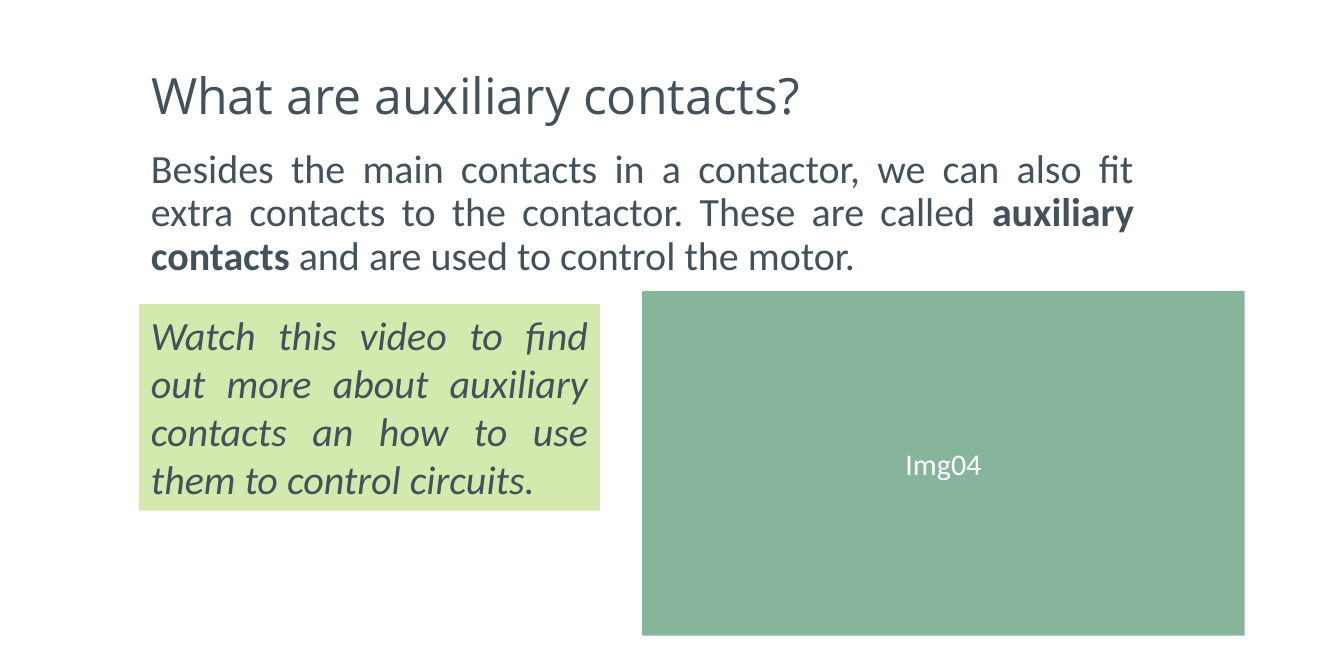
from pptx import Presentation
from pptx import util as u
from pptx.dml.color import RGBColor
from pptx.enum import shapes, text

SLATE = RGBColor(0x43, 0x52, 0x5A)
LIME = RGBColor(0xD3, 0xE9, 0xAD)
SAGE = RGBColor(0x86, 0xB5, 0x9C)
WHITE = RGBColor(0xFF, 0xFF, 0xFF)

prs = Presentation()
prs.slide_width, prs.slide_height = u.Cm(28.45), u.Cm(13.9)
s = prs.slides.add_slide(prs.slide_layouts[5])


def share(left, top, width, height):
    w, h = prs.slide_width / 100, prs.slide_height / 100
    return [int(n) for n in (left * w, top * h, width * w, height * h)]


def write(sp, runs, font, para, anchor):
    tf = sp.text_frame
    tf.word_wrap = True
    tf.auto_size = text.MSO_AUTO_SIZE.NONE
    tf.vertical_anchor = anchor
    p = tf.paragraphs[0]
    for name, value in para.items():
        setattr(p, name, value)
    for words, bold in runs:
        r = p.add_run()
        r.text = words
        r.font.bold = bold
        r.font.color.rgb = font["color"]
        for name in ("name", "size", "italic"):
            setattr(r.font, name, font.get(name))


LEFT, WIDE = 10.35, 74.91
TOP, MIDDLE = text.MSO_ANCHOR.TOP, text.MSO_ANCHOR.MIDDLE
ALIGN = text.PP_ALIGN
body_font = {"name": "Calibri", "size": u.Pt(24), "color": SLATE}

title = s.shapes.title
title.left, title.top, title.width, title.height = share(LEFT, 5.3, WIDE, 19.38)
write(title, [("What are auxiliary contacts?", False)],
      {"name": "Open Sans", "size": u.Pt(30), "color": SLATE},
      {"alignment": ALIGN.LEFT, "line_spacing": 0.9}, MIDDLE)

body = s.shapes.add_textbox(*share(LEFT, 21.8, WIDE, 22.49))
write(body, [
    ("Besides the main contacts in a contactor, we can also fit extra contacts "
     "to the contactor. These are called ", False),
    ("auxiliary contacts ", True),
    ("and are used to control the motor.", False),
], body_font, {"alignment": ALIGN.JUSTIFY, "line_spacing": 0.9,
               "space_before": u.Pt(7.3)}, TOP)

panels = [
    (share(LEFT, 46.3, 34.29, 31.44), LIME,
     "Watch this video to find out more about auxiliary contacts an how to use "
     "them to control circuits.",
     {**body_font, "italic": True}, ALIGN.JUSTIFY, TOP),
    (share(47.78, 44.3, 44.84, 52.47), SAGE, "Img04",
     {"name": "Calibri", "size": u.Pt(18), "color": WHITE}, ALIGN.CENTER, MIDDLE),
]
for box, fill, words, font, align, anchor in panels:
    sp = s.shapes.add_shape(shapes.MSO_SHAPE.RECTANGLE, *box)
    sp.shadow.inherit = False
    sp.fill.solid()
    sp.fill.fore_color.rgb = fill
    sp.line.fill.background()
    write(sp, [(words, False)], font, {"alignment": align}, anchor)

prs.save("out.pptx")
